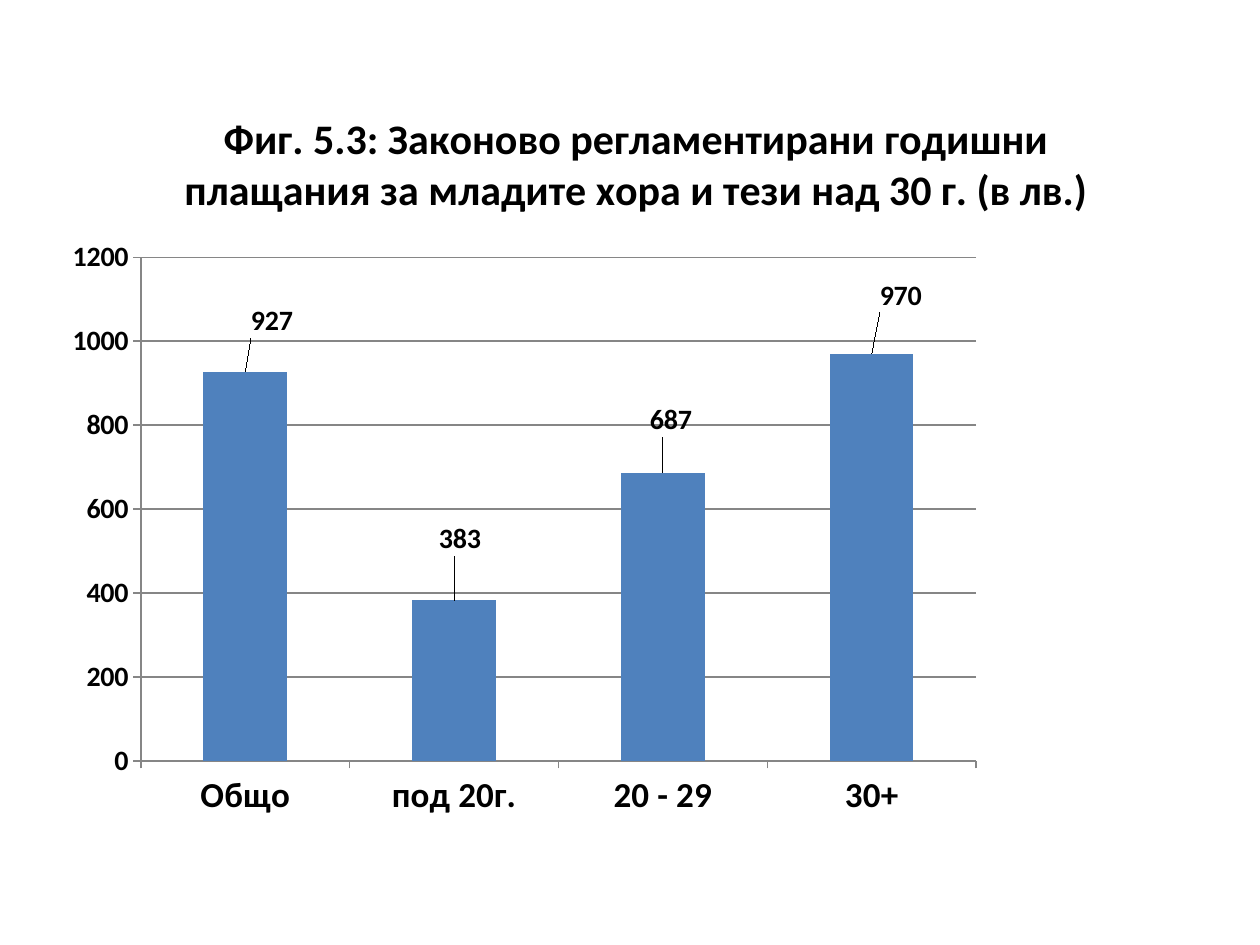
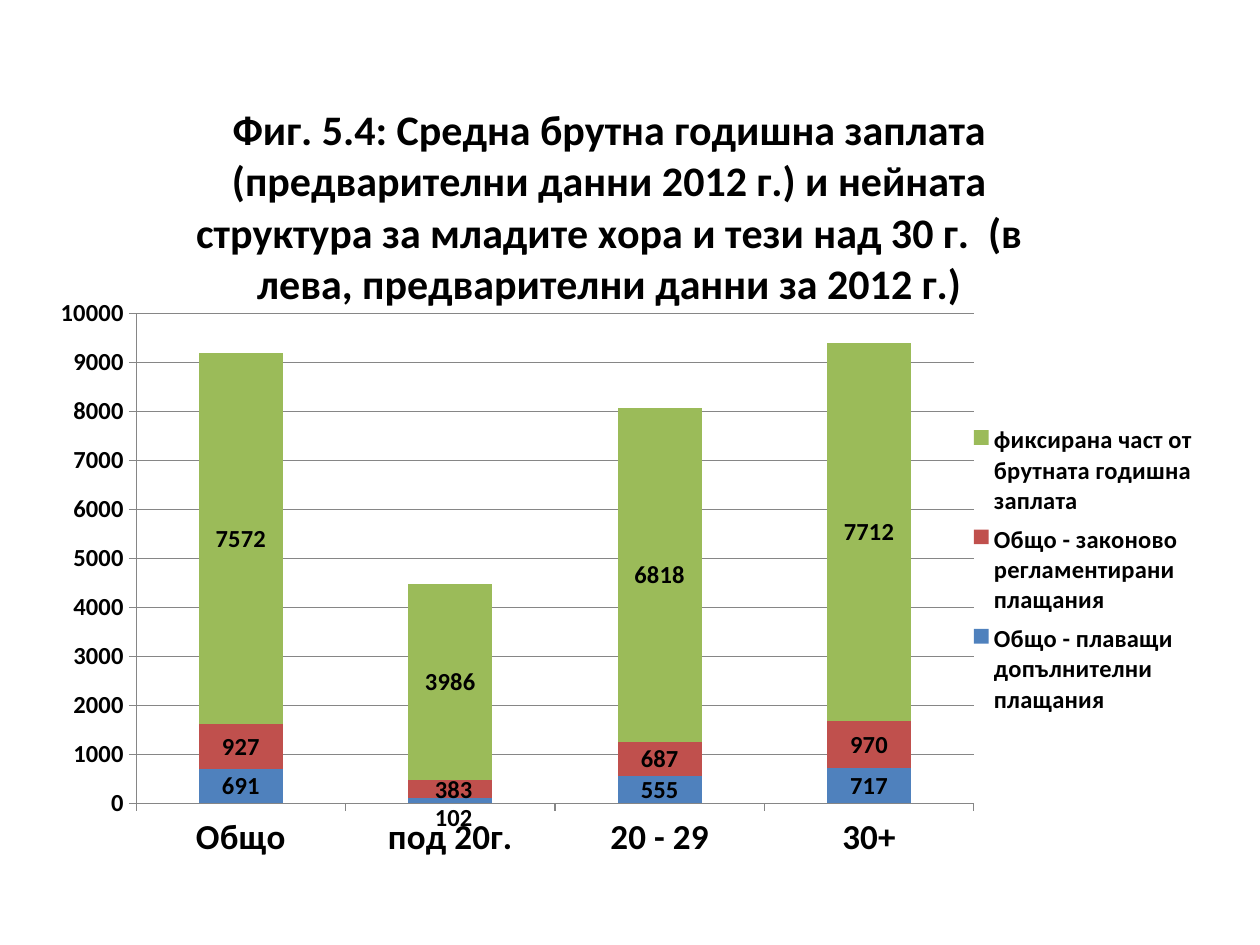
"""Build two slides of column charts on yearly pay by age group."""
from dataclasses import dataclass

import lxml.etree
import pptx
import pptx.chart.data
import pptx.dml.color
import pptx.enum.chart
import pptx.oxml.ns
import pptx.util

Cm = pptx.util.Cm
Pt = pptx.util.Pt
RGBColor = pptx.dml.color.RGBColor
ChartType = pptx.enum.chart.XL_CHART_TYPE
LabelPosition = pptx.enum.chart.XL_LABEL_POSITION
qn = pptx.oxml.ns.qn


@dataclass(frozen=True)
class Theme:
    font: str = "Calibri"
    text: RGBColor = RGBColor(0x00, 0x00, 0x00)
    line: RGBColor = RGBColor(0x86, 0x86, 0x86)
    series: tuple = (
        RGBColor(0x4F, 0x81, 0xBD),
        RGBColor(0xC0, 0x50, 0x4D),
        RGBColor(0x9B, 0xBB, 0x59),
    )
    base_size: int = 10
    title_size: int = 24
    category_size: int = 20


AGE_GROUPS = ("Общо", "под 20г.", "20 - 29", "30+")
REGULATED_PAY = (927, 383, 687, 970)


class Slides:
    """Hold the deck, its theme and the current slide."""

    def __init__(self, theme):
        self.theme = theme
        self.deck = pptx.Presentation()
        self.deck.slide_width = Cm(25.4)
        self.deck.slide_height = Cm(19.05)
        self.page = None

    def add_page(self):
        self.page = self.deck.slides.add_slide(self.deck.slide_layouts[6])

    def style_font(self, font, size, bold=True):
        font.name = self.theme.font
        font.size = Pt(size)
        font.bold = bold
        font.color.rgb = self.theme.text

    def set_layout(self, parent, after=None, edge=True, inner=False, **place):
        for old in parent.findall(qn("c:layout")):
            parent.remove(old)
        layout = lxml.etree.Element(qn("c:layout"))
        manual = lxml.etree.SubElement(layout, qn("c:manualLayout"))
        settings = {"layoutTarget": "inner"} if inner else {}
        if edge:
            settings.update(xMode="edge", yMode="edge")
        settings.update(place)
        for name, value in settings.items():
            lxml.etree.SubElement(manual, qn(f"c:{name}")).set("val", str(value))
        if after is None:
            parent.insert(0, layout)
        else:
            parent.find(qn(after)).addnext(layout)

    def add_chart(self, kind, height, series, label_size, plot_box):
        data = pptx.chart.data.CategoryChartData(number_format="0")
        data.categories = AGE_GROUPS
        for name, values in series:
            data.add_series(name, values)
        frame = self.page.shapes.add_chart(
            kind, Cm(0.99), Cm(1.4), Cm(23.42), Cm(height), data
        )
        chart = frame.chart
        chart.has_legend = False
        self.style_font(chart.font, self.theme.base_size, bold=False)
        plot = chart.plots[0]
        plot.gap_width = 150
        plot.vary_by_categories = False
        if kind == ChartType.COLUMN_STACKED:
            plot.overlap = 100
        for one, color in zip(plot.series, self.theme.series):
            one.format.fill.solid()
            one.format.fill.fore_color.rgb = color
            labels = one.data_labels
            labels.show_value = True
            labels.number_format = "0"
            labels.number_format_is_linked = False
            self.style_font(labels.font, label_size)
        area = plot._element.getparent()
        self.set_layout(area, inner=True, **dict(zip("xywh", plot_box)))
        return chart

    def add_title(self, chart, text, x, y):
        chart.has_title = True
        title = chart.chart_title
        span = title.text_frame.paragraphs[0].add_run()
        span.text = text
        self.style_font(span.font, self.theme.title_size)
        title.include_in_layout = False
        self.set_layout(title._element, "c:tx", x=x, y=y)

    def style_axes(self, chart, value_size, top, step):
        values = chart.value_axis
        values.minimum_scale = 0
        values.maximum_scale = top
        values.major_unit = step
        values.has_major_gridlines = True
        values.major_gridlines.format.line.color.rgb = self.theme.line
        values.tick_labels.number_format = "0"
        values.tick_labels.number_format_is_linked = False
        sizes = ((chart.category_axis, self.theme.category_size), (values, value_size))
        for axis, size in sizes:
            axis.format.line.color.rgb = self.theme.line
            axis.major_tick_mark = pptx.enum.chart.XL_TICK_MARK.OUTSIDE
            self.style_font(axis.tick_labels.font, size)

    def shift_label(self, series, index, size, position, x, y):
        label = series.points[index].data_label
        label.position = position
        self.style_font(label.font, size)
        element = series._element.xpath(f'c:dLbls/c:dLbl[c:idx/@val="{index}"]')[0]
        self.set_layout(element, "c:idx", edge=False, x=x, y=y)

    def add_legend(self, chart, size, box):
        chart.has_legend = True
        legend = chart.legend
        legend.position = pptx.enum.chart.XL_LEGEND_POSITION.RIGHT
        legend.include_in_layout = False
        self.style_font(legend.font, size)
        self.set_layout(legend._element, "c:legendPos", **dict(zip("xywh", box)))


def add_regulated_pay(slides):
    size = 16
    slides.add_page()
    chart = slides.add_chart(
        ChartType.COLUMN_CLUSTERED,
        16.46,
        [("Series 1", REGULATED_PAY)],
        size,
        (0.079, 0.23, 0.719, 0.617),
    )
    slides.add_title(
        chart,
        "Фиг. 5.3: Законово регламентирани годишни плащания "
        "за младите хора и тези над 30 г. (в лв.)",
        0.11,
        0.04,
    )
    slides.style_axes(chart, size, 1200, 200)
    shifts = ((0.023, -0.035), (0.005, -0.047), (0.007, -0.037), (0.025, -0.044))
    for index, (x, y) in enumerate(shifts):
        slides.shift_label(
            chart.plots[0].series[0], index, size, LabelPosition.OUTSIDE_END, x, y
        )


def add_pay_structure(slides):
    size = 14
    slides.add_page()
    chart = slides.add_chart(
        ChartType.COLUMN_STACKED,
        16.28,
        [
            ("Общо - плаващи допълнителни плащания", (691, 102, 555, 717)),
            ("Общо - законово регламентирани плащания", REGULATED_PAY),
            ("фиксирана част от брутната годишна заплата", (7572, 3986, 6818, 7712)),
        ],
        size,
        (0.075, 0.302, 0.721, 0.607),
    )
    slides.add_title(
        chart,
        "Фиг. 5.4: Средна брутна годишна заплата (предварителни данни 2012 г.) "
        "и нейната структура за младите хора и тези над 30 г.  "
        "(в лева, предварителни данни за 2012 г.)",
        0.12,
        0.03,
    )
    slides.style_axes(chart, size, 10000, 1000)
    slides.add_legend(chart, size, (0.79, 0.43, 0.2, 0.38))
    for series, y in zip(chart.plots[0].series, (0.021, 0.001)):
        slides.shift_label(series, 1, size, LabelPosition.CENTER, 0.003, y)


def main():
    slides = Slides(Theme())
    add_regulated_pay(slides)
    add_pay_structure(slides)
    slides.deck.save("out.pptx")


if __name__ == "__main__":
    main()
